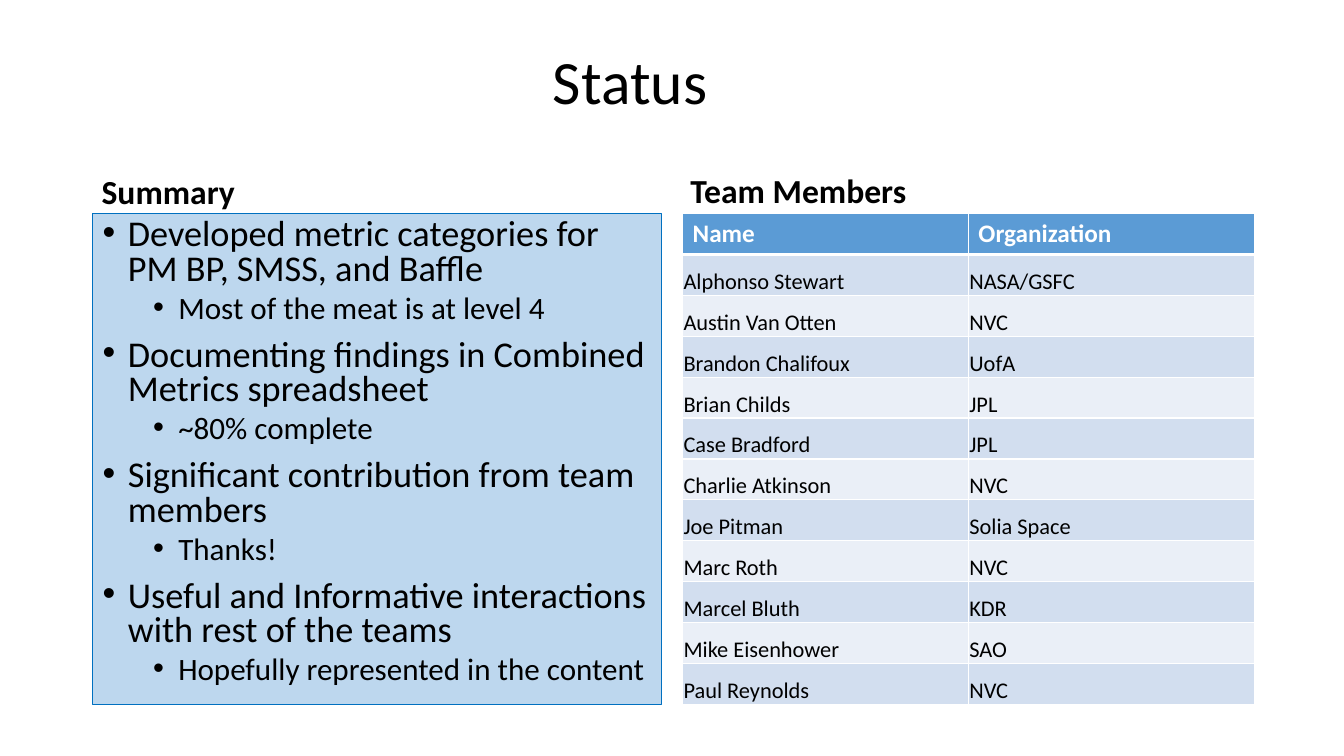
from dataclasses import dataclass

from lxml.etree import SubElement
from pptx import Presentation
from pptx.dml.color import RGBColor
from pptx.enum.shapes import MSO_SHAPE
from pptx.enum.text import MSO_ANCHOR, PP_ALIGN
from pptx.oxml.ns import qn
from pptx.util import Pt

EMU_PER_PX = 9144  # 100 px to the inch
FONT = "Calibri"
BLACK, WHITE = "000000", "FFFFFF"
HEADER_FILL = "5B9BD5"
BAND_FILLS = ("D2DEEF", "EAEFF7")


@dataclass(frozen=True)
class Label:
    text: str
    box: tuple[int, int, int, int]
    size: float
    bold: bool
    anchor: MSO_ANCHOR
    align: PP_ALIGN
    space_before: int


@dataclass(frozen=True)
class BulletStyle:
    size: float
    margin: int
    space_before: int


LABELS = [
    Label("Status", (50, 11, 1150, 145), 44, False, MSO_ANCHOR.MIDDLE, PP_ALIGN.CENTER, 0),
    Label("Summary", (91, 157, 564, 58), 24, True, MSO_ANCHOR.BOTTOM, PP_ALIGN.LEFT, 10),
    Label("Team Members", (675, 156, 567, 58), 24, True, MSO_ANCHOR.BOTTOM, PP_ALIGN.LEFT, 10),
]
SUMMARY_BOX = (92, 212, 564, 487)
BULLET_STYLES = [BulletStyle(25.9, 25, 10), BulletStyle(22.2, 75, 5)]
BULLET_HANG = 25
SUMMARY = [
    (0, "Developed metric categories for PM BP, SMSS, and Baffle"),
    (1, "Most of the meat is at level 4"),
    (0, "Documenting findings in Combined Metrics spreadsheet"),
    (1, "~80% complete"),
    (0, "Significant contribution from team members"),
    (1, "Thanks!"),
    (0, "Useful and Informative interactions with rest of the teams"),
    (1, "Hopefully represented in the content"),
]
TEAM_BOX = (677, 212, 567, 487)
TEAM = [
    ("Name", "Organization"),
    ("Alphonso Stewart", "NASA/GSFC"),
    ("Austin Van Otten", "NVC"),
    ("Brandon Chalifoux", "UofA"),
    ("Brian Childs", "JPL"),
    ("Case Bradford", "JPL"),
    ("Charlie Atkinson", "NVC"),
    ("Joe Pitman", "Solia Space"),
    ("Marc Roth", "NVC"),
    ("Marcel Bluth", "KDR"),
    ("Mike Eisenhower", "SAO"),
    ("Paul Reynolds", "NVC"),
]


def px(length: int) -> int:
    return length * EMU_PER_PX


def color(value: str) -> RGBColor:
    return RGBColor.from_string(value)


def format_runs(p, size: float, value: str = BLACK, bold: bool = False) -> None:
    for r in p.runs:
        r.font.name = FONT
        r.font.size = Pt(size)
        r.font.bold = bold
        r.font.color.rgb = color(value)


def add_label(slide, label: Label) -> None:
    tf = slide.shapes.add_textbox(*map(px, label.box)).text_frame
    tf.word_wrap = True
    tf.vertical_anchor = label.anchor
    p = tf.paragraphs[0]
    p.text = label.text
    p.alignment = label.align
    p.line_spacing = 0.9
    p.space_before = Pt(label.space_before)
    format_runs(p, label.size, bold=label.bold)


def add_bullet(p, margin: int) -> None:
    pPr = p._p.get_or_add_pPr()
    pPr.set("marL", str(px(margin)))
    pPr.set("indent", str(-px(BULLET_HANG)))
    SubElement(pPr, qn("a:buFont"), typeface="Arial")
    SubElement(pPr, qn("a:buChar"), char="•")


def add_summary(slide) -> None:
    sp = slide.shapes.add_shape(MSO_SHAPE.RECTANGLE, *map(px, SUMMARY_BOX))
    sp.shadow.inherit = False
    sp.fill.solid()
    sp.fill.fore_color.rgb = color("BDD7EE")
    sp.line.color.rgb = color("0070C0")
    sp.line.width = Pt(0.75)
    tf = sp.text_frame
    tf.word_wrap = True
    tf.vertical_anchor = MSO_ANCHOR.TOP
    tf.text = "\n".join(text for _, text in SUMMARY)
    for p, (level, _) in zip(tf.paragraphs, SUMMARY):
        style = BULLET_STYLES[level]
        p.level = level
        p.alignment = PP_ALIGN.LEFT
        p.line_spacing = 0.8
        p.space_before = Pt(style.space_before)
        add_bullet(p, style.margin)
        format_runs(p, style.size)


def set_borders(cell, row: int) -> None:
    """White cell borders, thicker between the header and the first member."""
    widths = {"L": 1, "R": 1, "T": 3 if row == 1 else 1, "B": 3 if row == 0 else 1}
    tcPr = cell._tc.get_or_add_tcPr()
    for side, width in widths.items():
        ln = SubElement(tcPr, qn(f"a:ln{side}"), w=str(Pt(width)))
        SubElement(SubElement(ln, qn("a:solidFill")), qn("a:srgbClr"), val=WHITE)


def fill_cell(cell, row: int, text: str) -> None:
    is_header = row == 0
    set_borders(cell, row)
    cell.fill.solid()
    cell.fill.fore_color.rgb = color(HEADER_FILL if is_header else BAND_FILLS[(row - 1) % 2])
    cell.text = text
    p = cell.text_frame.paragraphs[0]
    if is_header:
        format_runs(p, 18, WHITE, bold=True)
    else:
        cell.vertical_anchor = MSO_ANCHOR.BOTTOM
        cell.margin_left = cell.margin_top = cell.margin_right = px(1)
        cell.margin_bottom = 0
        format_runs(p, 16)


def add_team(slide) -> None:
    x, y, w, h = map(px, TEAM_BOX)
    table = slide.shapes.add_table(len(TEAM), len(TEAM[0]), x, y, w, h).table
    for row, texts in enumerate(TEAM):
        for column, text in enumerate(texts):
            fill_cell(table.cell(row, column), row, text)


def main() -> None:
    prs = Presentation()
    prs.slide_width, prs.slide_height = px(1333), px(750)
    slide = prs.slides.add_slide(prs.slide_layouts[6])
    for label in LABELS:
        add_label(slide, label)
    add_summary(slide)
    add_team(slide)
    prs.save("out.pptx")


if __name__ == "__main__":
    main()
